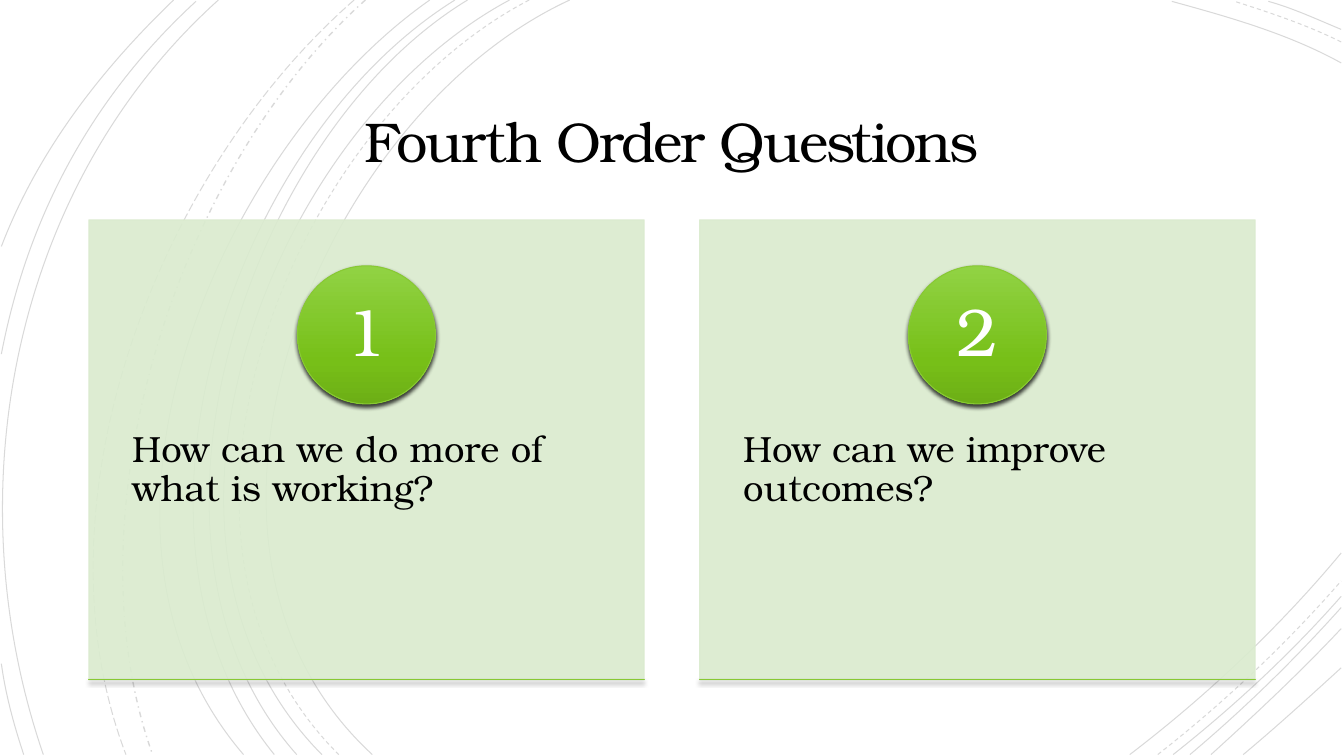
from pptx import Presentation
from pptx.dml.color import RGBColor
from pptx.enum.dml import MSO_LINE as DASH
from pptx.enum.shapes import MSO_SHAPE as SHAPE
from pptx.enum.text import MSO_ANCHOR as ANCHOR, PP_ALIGN as ALIGN
from pptx.oxml.ns import qn
from pptx.util import Pt
from lxml.etree import SubElement

BLACK = RGBColor(0x00, 0x00, 0x00)
WHITE = RGBColor(0xFF, 0xFF, 0xFF)
PALE_GREEN = RGBColor(0xDA, 0xEB, 0xCE)
EDGE_GREEN = RGBColor(0x88, 0xC9, 0x33)
GREEN_STOPS = [(0, RGBColor(0x91, 0xD3, 0x44)),
               (69, RGBColor(0x77, 0xBF, 0x18)),
               (100, RGBColor(0x6D, 0xAF, 0x16))]
FONT = "TeX Gyre Bonum"

SLIDE_W, SLIDE_H = 960, 540
CARD_W, CARD_H, CARD_GAP = 396.7, 328.7, 39.7
CARD_LEFT, CARD_TOP = 63.4, 157
QUESTIONS = ["How can we do more of what is working?",
             "How can we improve outcomes?"]

# Bezier arcs: start, two control points, end
SOLID_ARCS = [
    ((406.8, 0), (226.8, 82.8), (103, 388.8), (265.7, 538.6)),
    ((364.3, 0), (194.4, 91.4), (79.2, 386.6), (229.7, 538.6)),
    ((334.1, 0), (175.7, 95.8), (79.2, 389.5), (211.7, 538.6)),
    ((324.7, 0), (166.3, 99.4), (69.8, 383.8), (195.8, 538.6)),
    ((307.4, 0), (156.2, 105.8), (38.2, 380.9), (173.5, 538.6)),
    ((156.2, 0), (7.9, 133.2), (-33.1, 352.8), (31, 538.6)),
    ((140.4, 0.7), (66.2, 69.1), (20.2, 154.1), (1.4, 252.7)),
    ((123.8, 0), (72, 49.7), (26.6, 108), (1.4, 175.7)),
    ((0.7, 473.8), (4.3, 496.1), (10.1, 517.7), (17.3, 538.6)),
    ((958.3, 44.6), (920.2, 24.5), (877, 11.5), (836.6, 0.7)),
    ((958.3, 20.9), (941, 13.7), (923.8, 6.5), (905.8, 0.7)),
    ((807.1, 538.6), (861.8, 496.8), (913.7, 447.8), (958.3, 394.6)),
    ((838.1, 538.6), (880.6, 504.7), (921.6, 466.6), (958.3, 425.5)),
    ((850.3, 538.6), (888.5, 506.9), (924.5, 471.6), (958.3, 434.2)),
    ((864.7, 538.6), (897.1, 510.5), (928.8, 480.2), (958.3, 448.6)),
    ((888.5, 538.6), (912.2, 519.1), (935.3, 498.2), (958.3, 476.6)),
]
DASHED_ARCS = [
    ((378, 0), (205.2, 90), (88.6, 386.6), (241.9, 538.6)),
    ((958.3, 29.5), (933.8, 18), (907.2, 8.6), (882, 0.7)),
    ((826.6, 539.3), (873.4, 502.6), (918, 460.8), (957.6, 415.4)),
]
DASH_DOT_ARCS = [((261.4, 0), (126.7, 119.5), (46.8, 366.5), (108.7, 538.6))]
LONG_DASH_ARCS = [((252.7, 0), (113, 121.7), (20.9, 359.3), (90, 538.6))]
ARC_STYLES = [(SOLID_ARCS, DASH.SOLID, 0.75), (DASHED_ARCS, DASH.DASH, 0.75),
              (DASH_DOT_ARCS, DASH.DASH_DOT, 1), (LONG_DASH_ARCS, DASH.LONG_DASH, 0.75)]


def set_alpha(fill, percent):
    color = fill._xPr.find(qn("a:solidFill"))[0]
    SubElement(color, qn("a:alpha"), val=str(percent * 1000))


def add_arc(s, arc):
    """Add an open freeform whose three segments become one cubic curve."""
    builder = s.shapes.build_freeform(*arc[0], scale=Pt(1))
    builder.add_line_segments(arc[1:], close=False)
    sp = builder.convert_to_shape()
    outline = next(sp._element.iter(qn("a:path")))
    segments = outline.findall(qn("a:lnTo"))
    curve = SubElement(outline, qn("a:cubicBezTo"))
    for segment in segments:
        curve.append(segment[0])
        outline.remove(segment)
    return sp


def add_arcs(s):
    for arcs, dash, width in ARC_STYLES:
        for arc in arcs:
            sp = add_arc(s, arc)
            sp.shadow.inherit = False
            sp.fill.background()
            sp.line.color.rgb = BLACK
            sp.line.width = Pt(width)
            sp.line.dash_style = dash
            set_alpha(sp.line.fill, 15)


def write(sp, text, size, color, align, spacing, anchor, insets):
    """Fill a shape with one paragraph; insets are (horizontal, vertical)."""
    tf = sp.text_frame
    tf.word_wrap = True
    tf.vertical_anchor = anchor
    tf.margin_left = tf.margin_right = Pt(insets[0])
    tf.margin_top = tf.margin_bottom = Pt(insets[1])
    p = tf.paragraphs[0]
    p.text = text
    p.alignment = align
    p.line_spacing = spacing
    p.font.name = FONT
    p.font.size = Pt(size)
    p.font.color.rgb = color
    return p


def add_title(s, x, y, w, h):
    box = s.shapes.add_textbox(Pt(x), Pt(y), Pt(w), Pt(h))
    p = write(box, "Fourth Order Questions", 40, BLACK, ALIGN.CENTER, 0.85,
              ANCHOR.MIDDLE, (18, 18))
    p.runs[0].font._element.set("spc", "-150")


def add_glossy(s, kind, x, y, w, h):
    """Add a shape with the green gradient and a soft shadow below it."""
    sp = s.shapes.add_shape(kind, Pt(x), Pt(y), Pt(w), Pt(h))
    sp.fill.gradient()
    sp.fill.gradient_angle = 270
    stops = sp.fill._xPr.find(qn("a:gradFill")).find(qn("a:gsLst"))
    stops.clear()
    for pos, color in GREEN_STOPS:
        stop = SubElement(stops, qn("a:gs"), pos=str(pos * 1000))
        SubElement(stop, qn("a:srgbClr"), val=str(color))
    sp.line.color.rgb = EDGE_GREEN
    sp.line.width = Pt(0.75)
    sp.shadow.inherit = False
    effects = sp._element.spPr.find(qn("a:effectLst"))
    shadow = SubElement(effects, qn("a:outerShdw"), blurRad=str(Pt(3)),
                        dist=str(Pt(2)), dir="5400000", rotWithShape="0")
    color = SubElement(shadow, qn("a:srgbClr"), val=str(BLACK))
    SubElement(color, qn("a:alpha"), val="75000")
    return sp


def add_card(s, x, y, w, h, number, question):
    panel = s.shapes.add_shape(SHAPE.RECTANGLE, Pt(x), Pt(y), Pt(w), Pt(h))
    panel.shadow.inherit = False
    panel.fill.solid()
    panel.fill.fore_color.rgb = PALE_GREEN
    panel.line.color.rgb = PALE_GREEN
    panel.line.width = Pt(0.75)
    set_alpha(panel.fill, 90)
    set_alpha(panel.line.fill, 90)

    box = s.shapes.add_textbox(Pt(x), Pt(y + 0.38 * h), Pt(w), Pt(0.6 * h))
    write(box, question, 26, BLACK, ALIGN.LEFT, 0.9, ANCHOR.TOP, (31, 26))

    size = 0.3 * h
    badge = add_glossy(s, SHAPE.OVAL, x + (w - size) / 2, y + 0.1 * h, size, size)
    write(badge, str(number), 48, WHITE, ALIGN.CENTER, 0.9, ANCHOR.MIDDLE, (0, 0))
    add_glossy(s, SHAPE.RECTANGLE, x, y + h, w, 0.01)


def main():
    prs = Presentation()
    prs.slide_width, prs.slide_height = Pt(SLIDE_W), Pt(SLIDE_H)
    s = prs.slides.add_slide(prs.slide_layouts[6])
    add_arcs(s)
    add_title(s, 138.3, 62.6, 683.3, 82.8)
    for i, question in enumerate(QUESTIONS):
        add_card(s, CARD_LEFT + i * (CARD_W + CARD_GAP), CARD_TOP, CARD_W, CARD_H,
                 i + 1, question)
    prs.save("out.pptx")


if __name__ == "__main__":
    main()
